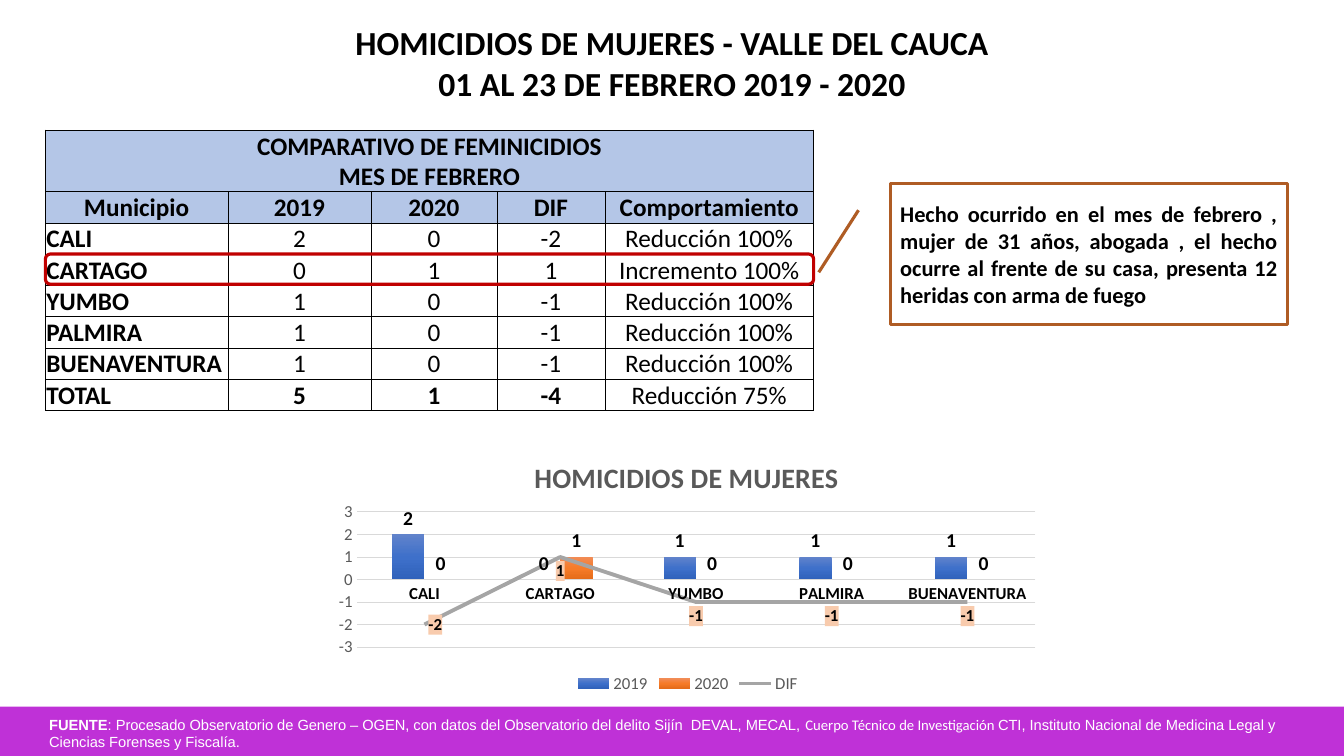
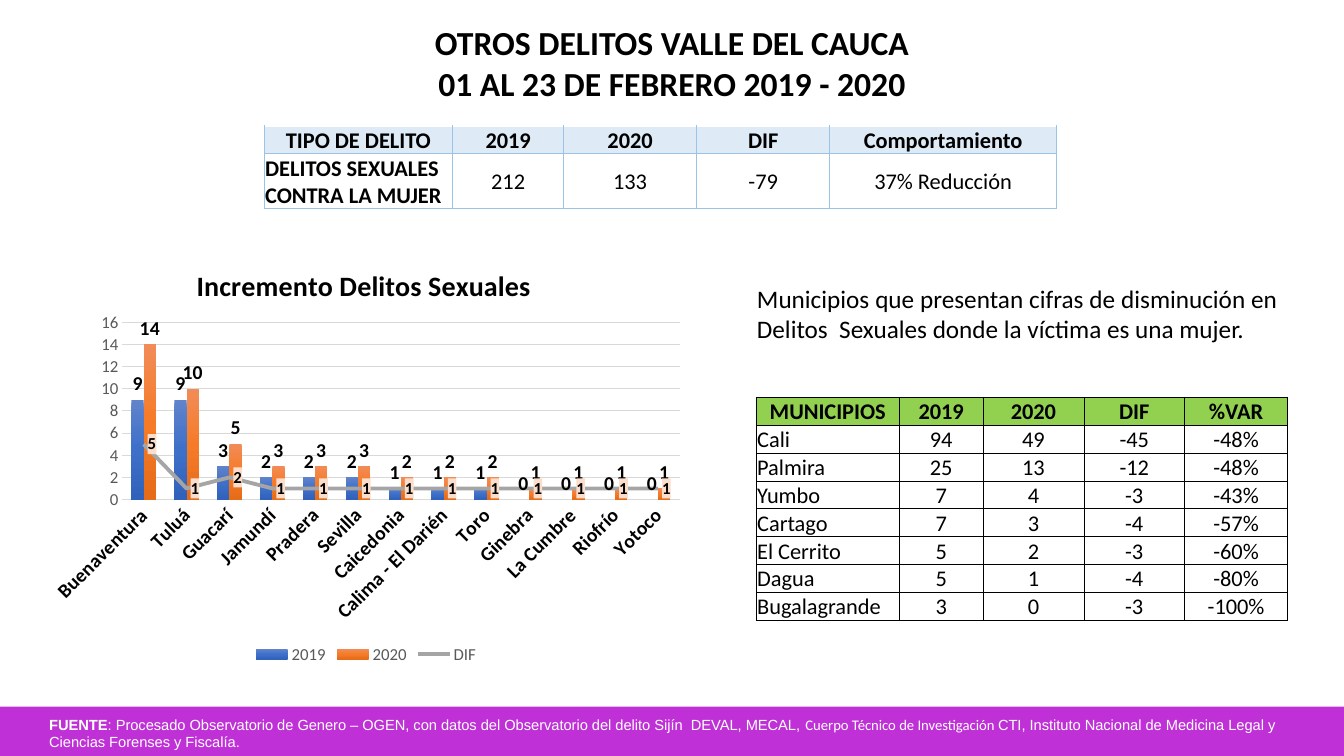
from copy import deepcopy

from lxml import etree
from pptx import Presentation
from pptx import util as u
from pptx.chart.data import CategoryChartData
from pptx.dml.color import RGBColor
from pptx.enum import chart as ch, shapes, text
from pptx.oxml import parse_xml
from pptx.oxml.ns import nsdecls, qn

PX = 9144  # one hundredth of an inch
BLACK = RGBColor(0x00, 0x00, 0x00)
WHITE = RGBColor(0xFF, 0xFF, 0xFF)
PURPLE = RGBColor(0xBF, 0x31, 0xD7)
BROWN = RGBColor(0xAF, 0x5C, 0x24)
RED = RGBColor(0xC0, 0x00, 0x00)
PERIWINKLE = RGBColor(0xB4, 0xC6, 0xE7)
PALE_BLUE = RGBColor(0xDE, 0xEA, 0xF6)
SKY = RGBColor(0x9C, 0xC2, 0xE5)
GREEN = RGBColor(0x92, 0xD0, 0x50)
DARK_GRAY = RGBColor(0x59, 0x59, 0x59)
GRAY = RGBColor(0xA5, 0xA5, 0xA5)
LIGHT_GRAY = RGBColor(0xD9, 0xD9, 0xD9)
PEACH = RGBColor(0xF8, 0xCB, 0xAD)
PALE_PEACH = RGBColor(0xFB, 0xDD, 0xCB)
BAR_GRADIENTS = (
    (RGBColor(0x61, 0x83, 0xCB), RGBColor(0x3E, 0x70, 0xCA), RGBColor(0x30, 0x62, 0xBB)),
    (RGBColor(0xF1, 0x8C, 0x57), RGBColor(0xF6, 0x7B, 0x28), RGBColor(0xE5, 0x6C, 0x19)),
)
BODY_FONT, SOURCE_FONT = "Calibri", "Arial"
LEFT, CENTER, JUSTIFY = text.PP_ALIGN.LEFT, text.PP_ALIGN.CENTER, text.PP_ALIGN.JUSTIFY
PERIOD = "01 AL 23 DE FEBRERO 2019 - 2020"
SOURCE = (
    ("FUENTE", SOURCE_FONT, True),
    (": Procesado Observatorio de Genero – OGEN, con datos del Observatorio del delito "
     "Sijín  DEVAL, MECAL, ", SOURCE_FONT, False),
    ("Cuerpo Técnico de Investigación ", BODY_FONT, False),
    ("CTI, Instituto Nacional de Medicina Legal y Ciencias Forenses y Fiscalía.",
     SOURCE_FONT, False),
)


def emu(lengths):
    return [u.Emu(length * PX) for length in lengths]


def style(font, size, bold=False, color=BLACK, name=BODY_FONT):
    font.size, font.bold, font.name = u.Pt(size), bold, name
    font.color.rgb = color


def write(frame, content, size, bold=False, align=LEFT):
    frame.text = content
    frame.word_wrap = True
    for paragraph in frame.paragraphs:
        paragraph.alignment = align
        for run in paragraph.runs:
            style(run.font, size, bold)


def border(cell, sides, color, width):
    properties = cell._tc.get_or_add_tcPr()
    for side in sides:
        line = etree.SubElement(properties, qn(f"a:ln{side}"), w=str(u.Pt(width)))
        fill = etree.SubElement(line, qn("a:solidFill"))
        etree.SubElement(fill, qn("a:srgbClr"), val=str(color))


def manual_layout(frame, position, target=""):
    """Layout element placing a chart part; position and frame are in slide px."""
    left, top, width, height = frame
    parts = {"x": (position[0] - left) / width, "y": (position[1] - top) / height}
    if len(position) == 4:
        parts.update(w=position[2] / width, h=position[3] / height)
    values = "".join(f'<c:{key} val="{value:.3f}"/>' for key, value in parts.items())
    return parse_xml(
        f'<c:layout {nsdecls("c")}><c:manualLayout>{target}<c:xMode val="edge"/>'
        f'<c:yMode val="edge"/>{values}</c:manualLayout></c:layout>')


def gradient(series, colors):
    fill = series.format.fill
    fill.gradient()
    fill.gradient_angle = 270
    stops = series._element.xpath(".//a:gsLst")[0]
    stops.insert(1, deepcopy(stops[0]))
    for stop, color, position in zip(fill.gradient_stops, colors, (0, 0.5, 1)):
        stop.color.rgb, stop.position = color, position


def move_to_line_plot(series, bar_plot):
    """Draw one column series as a line on the same axes."""
    element = series._element
    for flag in element.xpath("c:invertIfNegative"):
        element.remove(flag)
    element.xpath("c:spPr")[0].addnext(
        parse_xml(f'<c:marker {nsdecls("c")}><c:symbol val="none"/></c:marker>'))
    etree.SubElement(element, qn("c:smooth"), val="0")
    line_plot = parse_xml(
        f'<c:lineChart {nsdecls("c")}><c:grouping val="standard"/>'
        '<c:varyColors val="0"/></c:lineChart>')
    line_plot.append(element)
    etree.SubElement(line_plot, qn("c:marker"), val="1")
    for axis in bar_plot.xpath("c:axId"):
        line_plot.append(deepcopy(axis))
    bar_plot.addnext(line_plot)


class Report:
    """Holds the presentation and the slide being filled."""

    def __init__(self):
        self.deck = Presentation()
        self.deck.slide_width, self.deck.slide_height = emu((1333, 750))

    def new_slide(self, title):
        self.slide = self.deck.slides.add_slide(self.deck.slide_layouts[6])
        self.text((165, 17, 1003, 91), f"{title}\n{PERIOD}", 24, True, CENTER)
        self.shape(shapes.MSO_SHAPE.RECTANGLE, (0, 701, 1333, 49), fill=PURPLE)
        source = self.text((39, 705, 1256, 45), "", 10.5)
        for part, name, bold in SOURCE:
            run = source.paragraphs[0].add_run()
            run.text = part
            style(run.font, 10.5, bold, WHITE, name)

    def text(self, box, content, size, bold=False, align=LEFT):
        frame = self.slide.shapes.add_textbox(*emu(box)).text_frame
        write(frame, content, size, bold, align)
        return frame

    def shape(self, preset, box, fill=None, line=None):
        shape = self.slide.shapes.add_shape(preset, *emu(box))
        shape.shadow.inherit = False
        if fill is None:
            shape.fill.background()
        else:
            shape.fill.solid()
            shape.fill.fore_color.rgb = fill
        if line is None:
            shape.line.fill.background()
        else:
            shape.line.color.rgb, shape.line.width = line, u.Pt(2.25)
        return shape

    def callout(self, box, pointer, content):
        callout = self.shape(shapes.MSO_SHAPE.LINE_CALLOUT_1, box, line=BROWN)
        for index, value in enumerate(pointer):
            callout.adjustments[index] = value
        callout.text_frame.vertical_anchor = text.MSO_ANCHOR.MIDDLE
        write(callout.text_frame, content, 16, True, JUSTIFY)

    def table(self, origin, widths, heights, rows, size, header_fill, is_bold,
              header_rows=1, line=(BLACK, 0.5), top_line=True):
        box = (*origin, sum(widths), sum(heights))
        table = self.slide.shapes.add_table(len(rows), len(widths), *emu(box)).table
        table.first_row = table.horz_banding = False
        for column, width in zip(table.columns, emu(widths)):
            column.width = width
        for row, height in zip(table.rows, emu(heights)):
            row.height = height
        for r, values in enumerate(rows):
            header = r < header_rows
            for c in range(len(widths)):
                cell = table.cell(r, c)
                border(cell, "LRTB" if r or top_line else "LRB", *line)
                cell.fill.solid()
                cell.fill.fore_color.rgb = header_fill if header else WHITE
                cell.margin_left, cell.margin_right, cell.margin_top = emu((1, 1, 1))
                cell.margin_bottom = 0
                cell.vertical_anchor = text.MSO_ANCHOR.MIDDLE
                if c < len(values):
                    align = CENTER if header or c else LEFT
                    write(cell.text_frame, values[c], size, is_bold(r, c), align)
            if len(values) == 1:
                table.cell(r, 0).merge(table.cell(r, len(widths) - 1))

    def chart(self, box, title, title_at, title_color, plot_box, categories, series,
              scale, gap, category_size, label_fill, labels_below=(), slanted=False):
        data = CategoryChartData()
        data.categories = categories
        for name, values in series.items():
            data.add_series(name, values)
        chart = self.slide.shapes.add_chart(
            ch.XL_CHART_TYPE.COLUMN_CLUSTERED, *emu(box), data).chart
        style(chart.font, 10)

        chart.has_title = True
        heading = chart.chart_title
        heading.text_frame.text = title
        style(heading.text_frame.paragraphs[0].runs[0].font, 20, True, title_color)
        heading.include_in_layout = False
        plot_area = chart._chartSpace.xpath(".//c:plotArea")[0]
        for part in (heading._element, plot_area):
            for old in part.xpath("c:layout"):
                part.remove(old)
        heading._element.xpath("c:tx")[0].addnext(manual_layout(box, title_at))
        plot_area.insert(0, manual_layout(box, plot_box, '<c:layoutTarget val="inner"/>'))

        chart.has_legend = True
        chart.legend.position = ch.XL_LEGEND_POSITION.BOTTOM
        chart.legend.include_in_layout = False
        style(chart.legend.font, 12, color=DARK_GRAY)

        names, amounts = chart.category_axis, chart.value_axis
        for axis in (names, amounts):
            axis.major_tick_mark = axis.minor_tick_mark = ch.XL_TICK_MARK.NONE
        style(names.tick_labels.font, category_size, True)
        names.format.line.color.rgb, names.format.line.width = LIGHT_GRAY, u.Pt(1)
        if slanted:
            names._element.xpath("c:txPr/a:bodyPr")[0].set("rot", "-2700000")
        style(amounts.tick_labels.font, 12, color=DARK_GRAY)
        amounts.minimum_scale, amounts.maximum_scale, amounts.major_unit = scale
        amounts.format.line.fill.background()
        grid = amounts.major_gridlines.format.line
        grid.color.rgb, grid.width = LIGHT_GRAY, u.Pt(0.75)

        plot = chart.plots[0]
        plot.gap_width, plot.overlap, plot.vary_by_categories = gap, 0, False
        *bars, difference = plot.series
        for bar, colors in zip(bars, BAR_GRADIENTS):
            gradient(bar, colors)
            bar.data_labels.show_value = True
            bar.data_labels.position = ch.XL_LABEL_POSITION.OUTSIDE_END
            style(bar.data_labels.font, 14, True)
        self.difference_line(difference, label_fill, labels_below)
        move_to_line_plot(difference, plot._element)

    def difference_line(self, series, label_fill, labels_below):
        series.format.line.color.rgb, series.format.line.width = GRAY, u.Pt(2.75)
        series.data_labels.show_value = True
        series.data_labels.position = ch.XL_LABEL_POSITION.RIGHT
        style(series.data_labels.font, 12, True)
        for index in labels_below:
            label = series.points[index].data_label
            style(label.font, 12, True)
            label.position = ch.XL_LABEL_POSITION.BELOW
        for label_text in series._element.xpath(".//c:txPr"):
            label_text.addprevious(parse_xml(
                f'<c:spPr {nsdecls("c", "a")}><a:solidFill>'
                f'<a:srgbClr val="{label_fill}"/></a:solidFill></c:spPr>'))


def homicides(report):
    report.new_slide("HOMICIDIOS DE MUJERES - VALLE DEL CAUCA")
    report.callout(
        (883, 182, 394, 140), (0.19, -0.08, 0.63, -0.18),
        "Hecho ocurrido en el mes de febrero , mujer de 31 años, abogada , el hecho "
        "ocurre al frente de su casa, presenta 12 heridas con arma de fuego")
    towns = ("CALI", "CARTAGO", "YUMBO", "PALMIRA", "BUENAVENTURA")
    series = {"2019": (2, 0, 1, 1, 1), "2020": (0, 1, 0, 0, 0), "DIF": (-2, 1, -1, -1, -1)}
    rows = [("COMPARATIVO DE FEMINICIDIOS\vMES DE FEBRERO",),
            ("Municipio", *series, "Comportamiento")]
    for town, *counts in zip(towns, *series.values()):
        trend = "Incremento 100%" if counts[-1] > 0 else "Reducción 100%"
        rows.append((town, *map(str, counts), trend))
    rows.append(("TOTAL", *(str(sum(counts)) for counts in series.values()), "Reducción 75%"))
    report.table((45, 129), (181, 142, 125, 107, 207), [60] + [30] * 7, rows, 18, PERIWINKLE,
                 lambda r, c: r < 2 or c == 0 or (r == 7 and c < 4), header_rows=2)
    report.shape(shapes.MSO_SHAPE.ROUNDED_RECTANGLE, (45, 252, 762, 30), line=RED)
    report.chart((322, 428, 720, 264), "HOMICIDIOS DE MUJERES", (525, 449), DARK_GRAY,
                 (354, 508, 673, 134), towns, series, (-3, 3, 1), 219, 12, PEACH,
                 labels_below=range(1, 5))


def other_crimes(report):
    report.new_slide("OTROS DELITOS VALLE DEL CAUCA")
    report.table((262, 125), (187, 110, 132, 132, 225), (27, 54), (
        ("TIPO DE DELITO", "2019", "2020", "DIF", "Comportamiento"),
        ("DELITOS SEXUALES CONTRA LA MUJER", "212", "133", "-79", "37% Reducción"),
    ), 16, PALE_BLUE, lambda r, c: r == 0 or c == 0, line=(SKY, 1), top_line=False)
    report.text((741, 276, 536, 101),
                "Municipios que presentan cifras de disminución en Delitos  Sexuales "
                "donde la víctima es una mujer.", 18, align=JUSTIFY)
    report.table((750, 394), (142, 83, 100, 100, 102), [27] * 8, (
        ("MUNICIPIOS", "2019", "2020", "DIF", "%VAR"),
        ("Cali", "94", "49", "-45", "-48%"),
        ("Palmira", "25", "13", "-12", "-48%"),
        ("Yumbo", "7", "4", "-3", "-43%"),
        ("Cartago", "7", "3", "-4", "-57%"),
        ("El Cerrito", "5", "2", "-3", "-60%"),
        ("Dagua", "5", "1", "-4", "-80%"),
        ("Bugalagrande", "3", "0", "-3", "-100%"),
    ), 16, GREEN, lambda r, c: r == 0)
    towns = ("Buenaventura", "Tuluá", "Guacarí", "Jamundí", "Pradera", "Sevilla", "Caicedonia",
             "Calima - El Darién", "Toro", "Ginebra", "La Cumbre", "Riofrío", "Yotoco")
    before = (9, 9, 3, 2, 2, 2, 1, 1, 1, 0, 0, 0, 0)
    after = (14, 10, 5, 3, 3, 3, 2, 2, 2, 1, 1, 1, 1)
    series = {"2019": before, "2020": after, "DIF": [b - a for a, b in zip(before, after)]}
    report.chart((39, 234, 648, 429), "Incremento Delitos Sexuales", (190, 259), BLACK,
                 (121, 320, 553, 176), towns, series, (0, 16, 2), 150, 14, PALE_PEACH,
                 slanted=True)


def main():
    report = Report()
    homicides(report)
    other_crimes(report)
    report.deck.save("out.pptx")


if __name__ == "__main__":
    main()
